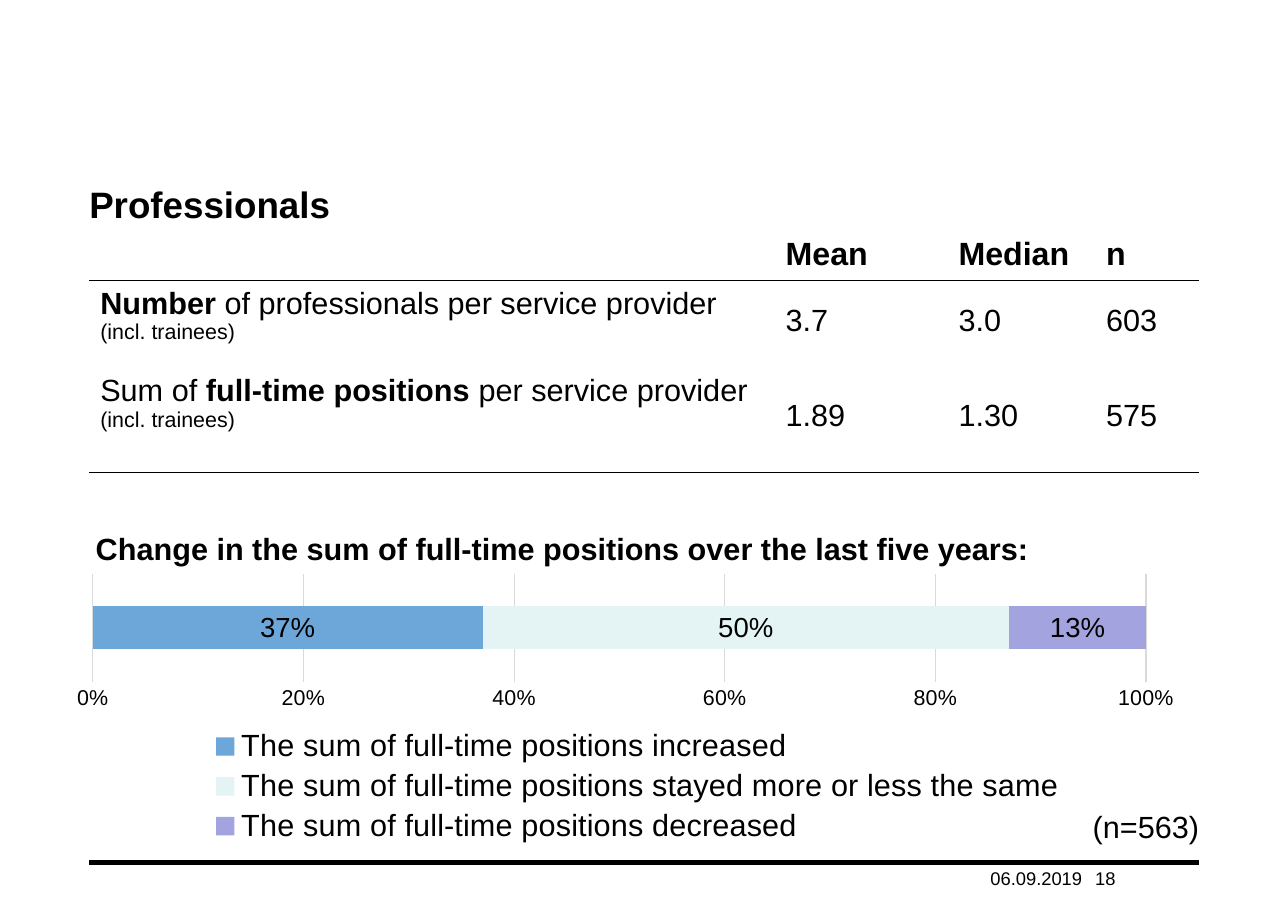
import pptx
import pptx.chart.data
import pptx.dml.color
import pptx.enum.chart
import pptx.enum.text
import pptx.oxml
import pptx.oxml.ns
import pptx.util
from lxml import etree

Pt = pptx.util.Pt
qn = pptx.oxml.ns.qn
RGB = pptx.dml.color.RGBColor.from_string
ANCHOR = pptx.enum.text.MSO_ANCHOR
XL = pptx.enum.chart

COLORS = {"ink": "000000", "grid": "D9D9D9", "increased": "6DA6D9",
          "same": "E4F3F4", "decreased": "A3A3E0"}
FONT = "Arial"

prs = pptx.Presentation()
prs.slide_width = pptx.util.Inches(11.69)
prs.slide_height = pptx.util.Inches(8.27)
s = prs.slides.add_slide(prs.slide_layouts[6])

# Grid of 100 columns by 100 rows
col, row = prs.slide_width / 100, prs.slide_height / 100
LEFT, WIDTH = 6.93, 86.14


def write(p, text, size=20, bold=False, line=None, before=None):
    """Add one run to paragraph p; line and before set its spacing."""
    r = p.add_run()
    r.text = text
    r.font.name, r.font.size, r.font.bold = FONT, Pt(size), bold
    r.font.color.rgb = RGB(COLORS["ink"])
    if line:
        p.line_spacing = line
    if before:
        p.space_before = Pt(before)


def set_layout(parent, index, x, y, w, h, inner=False):
    """Place a chart part by shares of the chart's size."""
    for old in parent.findall(qn("c:layout")):
        parent.remove(old)
    layout = etree.Element(qn("c:layout"))
    manual = etree.SubElement(layout, qn("c:manualLayout"))
    values = {"xMode": "edge", "yMode": "edge", "x": x, "y": y, "w": w, "h": h}
    if inner:
        values = {"layoutTarget": "inner", **values}
    for tag, value in values.items():
        etree.SubElement(manual, qn(f"c:{tag}")).set("val", str(value))
    parent.insert(index, layout)


# Chart
data = pptx.chart.data.CategoryChartData()
data.categories = ["1"]
changes = [("The sum of full-time positions increased", 0.37, "increased"),
           ("The sum of full-time positions stayed more or less the same", 0.5, "same"),
           ("The sum of full-time positions decreased", 0.13, "decreased")]
for name, share, key in changes:
    data.add_series(name, [share])
chart = s.shapes.add_chart(
    XL.XL_CHART_TYPE.BAR_STACKED_100, int(4.19 * col), int(62.39 * row),
    int(88.88 * col), int(31.08 * row), data).chart
chart.has_title = False
chart.font.name, chart.font.size = FONT, Pt(10)
chart.font.color.rgb = RGB(COLORS["ink"])

plot = chart.plots[0]
plot.gap_width, plot.overlap, plot.vary_by_categories = 150, 100, False
for series, (name, share, key) in zip(plot.series, changes):
    series.format.fill.solid()
    series.format.fill.fore_color.rgb = RGB(COLORS[key])
    labels = series.data_labels
    labels.show_value = True
    labels.position = XL.XL_LABEL_POSITION.CENTER
    labels.number_format, labels.number_format_is_linked = "0%", False
    labels.font.name, labels.font.size = FONT, Pt(18)
    labels.font.color.rgb = RGB(COLORS["ink"])

chart.category_axis.visible = False
axis = chart.value_axis
axis.minimum_scale, axis.maximum_scale, axis.major_unit = 0, 1, 0.2
axis.major_tick_mark = axis.minor_tick_mark = XL.XL_TICK_MARK.NONE
axis.tick_labels.number_format = "0%"
axis.tick_labels.number_format_is_linked = False
axis.tick_labels.font.name, axis.tick_labels.font.size = FONT, Pt(14)
axis.tick_labels.font.color.rgb = RGB(COLORS["ink"])
axis.format.line.fill.background()
axis.major_gridlines.format.line.color.rgb = RGB(COLORS["grid"])
axis.major_gridlines.format.line.width = Pt(0.75)

chart.has_legend = True
legend = chart.legend
legend.position = XL.XL_LEGEND_POSITION.BOTTOM
legend.include_in_layout = False
legend.font.name, legend.font.size = FONT, Pt(20)
legend.font.color.rgb = RGB(COLORS["ink"])
plot_area = chart.element.find(".//" + qn("c:plotArea"))
set_layout(plot_area, 0, 0.034, 0.02, 0.92, 0.38, inner=True)
set_layout(chart.element.find(".//" + qn("c:legend")), 1, 0.12, 0.55, 0.78, 0.44)

# Table
widths, heights = [53.21, 13.43, 11.46, 8.04], [5.44, 21.04]
table = s.shapes.add_table(2, 4, int(LEFT * col), int(25.39 * row),
                           int(WIDTH * col), int(sum(heights) * row)).table
table.first_row = table.horz_banding = False
style = table._tbl.tblPr.find(qn("a:tableStyleId"))
style.text = "{2D5ABB26-0587-4C30-8999-92F81FD0307C}"
for table_col, width in zip(table.columns, widths):
    table_col.width = int(width * col)
for table_row, height in zip(table.rows, heights):
    table_row.height = int(height * row)

for cell in table.iter_cells():
    ln = etree.SubElement(cell._tc.get_or_add_tcPr(), qn("a:lnB"), w=str(Pt(1)))
    fill = etree.SubElement(ln, qn("a:solidFill"))
    etree.SubElement(fill, qn("a:srgbClr"), val=COLORS["ink"])
    cell.fill.background()

figures = [("Mean", "3.7", "1.89"), ("Median", "3.0", "1.30"), ("n", "603", "575")]
for i, (heading, number, positions) in enumerate(figures, start=1):
    write(table.cell(0, i).text_frame.paragraphs[0], heading, size=21, bold=True)
    tf = table.cell(1, i).text_frame
    write(tf.paragraphs[0], number, line=1.5)
    write(tf.add_paragraph(), positions, line=1.5, before=29)

tf = table.cell(1, 0).text_frame
p = tf.paragraphs[0]
write(p, "Number ", bold=True)
write(p, "of professionals per service provider")
write(tf.add_paragraph(), "(incl. trainees)", size=14)
p = tf.add_paragraph()
write(p, "Sum of ", before=19)
write(p, "full-time positions ", bold=True)
write(p, "per service provider ")
write(p, "(incl. trainees)", size=14)

# Title, chart heading, sample size and footer: place, inset, anchor, wrap, format
exact = Pt(15)
texts = [
    ("Professionals", (LEFT, 19.95, WIDTH, 4.84), False, ANCHOR.BOTTOM, True,
     dict(size=24, bold=True)),
    ("Change in the sum of full-time positions over the last five years:",
     (6.59, 59.13, 85.89, 3.87), True, ANCHOR.TOP, True, dict(bold=True, line=exact)),
    ("(n=563)", (84, 89.6, 10.01, 3.87), True, ANCHOR.TOP, False, dict(line=exact)),
    ("06.09.2019", (76.9, 95.16, 8.13, 2.42), False, ANCHOR.BOTTOM, True, dict(size=12)),
    ("18", (85.03, 95.16, 8.04, 2.42), False, ANCHOR.BOTTOM, True, dict(size=12)),
]
for text, (x, y, w, h), inset, anchor, wrap, look in texts:
    tf = s.shapes.add_textbox(int(x * col), int(y * row),
                              int(w * col), int(h * row)).text_frame
    tf.word_wrap, tf.vertical_anchor = wrap, anchor
    if not inset:
        tf.margin_left = tf.margin_top = tf.margin_right = tf.margin_bottom = 0
    write(tf.paragraphs[0], text, **look)

# Footer rule
rule = s.shapes.add_connector(
    pptx.enum.shapes.MSO_CONNECTOR.STRAIGHT, int(LEFT * col), int(94.68 * row),
    int((LEFT + WIDTH) * col), int(94.68 * row))
rule.line.color.rgb, rule.line.width = RGB(COLORS["ink"]), Pt(3)
etree.SubElement(rule._element.spPr, qn("a:effectLst"))

prs.save("out.pptx")
